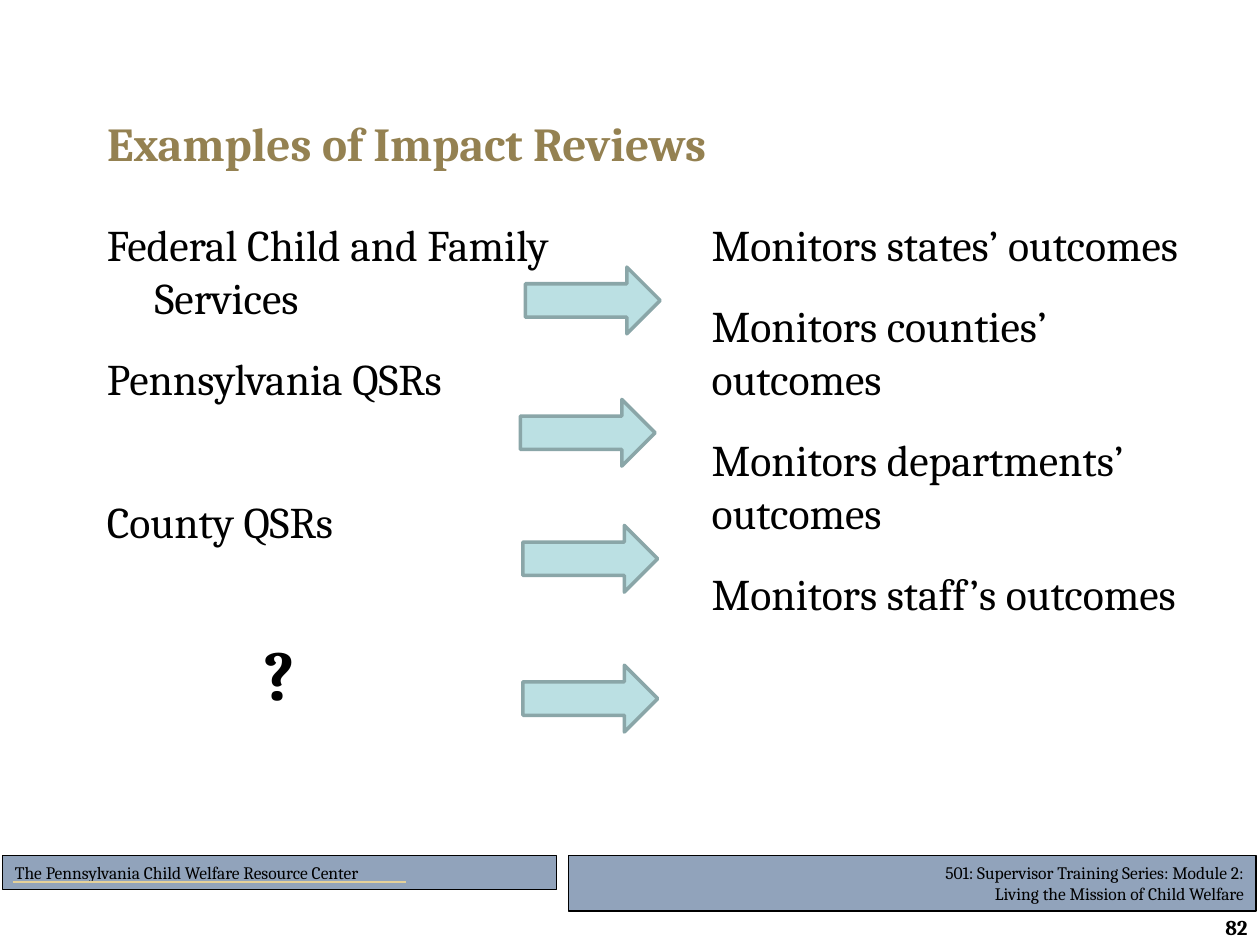
from dataclasses import dataclass

from lxml import etree
from pptx import Presentation
from pptx.dml.color import RGBColor
from pptx.enum.shapes import MSO_CONNECTOR, MSO_SHAPE
from pptx.enum.text import MSO_ANCHOR, PP_ALIGN
from pptx.oxml.ns import qn
from pptx.util import Inches, Pt

RECTANGLE, RIGHT_ARROW = MSO_SHAPE.RECTANGLE, MSO_SHAPE.RIGHT_ARROW
STRAIGHT = MSO_CONNECTOR.STRAIGHT
TOP, MIDDLE = MSO_ANCHOR.TOP, MSO_ANCHOR.MIDDLE
LEFT, RIGHT = PP_ALIGN.LEFT, PP_ALIGN.RIGHT

FONT = "Cambria"
BLACK, GOLD, PALE_GOLD = "000000", "948151", "E5D199"
BAR_BLUE, ARROW_FILL, ARROW_EDGE = "91A3BB", "BBE0E3", "8AA6A8"


@dataclass
class Box:
    left: float
    top: float
    width: float
    height: float

    def lengths(self):
        return [Inches(n) for n in (self.left, self.top, self.width, self.height)]


@dataclass
class Entry:
    text: str
    space_before: float = 0
    margin: float = 0.38
    indent: float = 0
    size: float = 25
    bold: bool = False
    color: str = BLACK
    align: PP_ALIGN = LEFT


@dataclass
class FooterBar:
    box: Box
    lines: list[str]
    align: PP_ALIGN
    line_width: float


REVIEWS = [
    Entry("Federal Child and Family Services", indent=-0.38),
    Entry("Pennsylvania QSRs", 16.5, indent=-0.38),
    Entry("County QSRs", 51.5, indent=-0.38),
    Entry("?", 48, margin=1.24, size=40, bold=True),
]
OUTCOMES = [
    Entry("Monitors states’ outcomes"),
    Entry("Monitors counties’ outcomes", 16.5),
    Entry("Monitors departments’ outcomes", 16.5),
    Entry("Monitors staff’s outcomes", 16.5),
]
FOOTER_BARS = [
    FooterBar(Box(4.51, 6.79, 5.46, 0.44),
              ["501: Supervisor Training Series: Module 2:",
               "Living the Mission of Child Welfare"], RIGHT, 0.75),
    FooterBar(Box(0.02, 6.79, 4.4, 0.27),
              ["The Pennsylvania Child Welfare Resource Center"], LEFT, 0.5),
]
ARROW_CORNERS = [(4.17, 2.12), (4.13, 3.17), (4.15, 4.17), (4.15, 5.28)]


def rgb(color: str) -> RGBColor:
    return RGBColor.from_string(color)


def write(shape, entries: list[Entry], anchor=TOP) -> None:
    frame = shape.text_frame
    frame.word_wrap = True
    frame.vertical_anchor = anchor
    frame.text = "\n".join(entry.text for entry in entries)
    for paragraph, entry in zip(frame.paragraphs, entries):
        paragraph.alignment = entry.align
        paragraph.space_before = Pt(entry.space_before)
        properties = paragraph._p.get_or_add_pPr()
        properties.set("marL", str(Inches(entry.margin)))
        properties.set("indent", str(Inches(entry.indent)))
        font = paragraph.runs[0].font
        font.name, font.size, font.bold = FONT, Pt(entry.size), entry.bold
        font.color.rgb = rgb(entry.color)


def add_text(slide, box: Box, entries: list[Entry], anchor=TOP) -> None:
    write(slide.shapes.add_textbox(*box.lengths()), entries, anchor)


def add_outlined(slide, kind, box: Box, fill: str, edge: str, width: float):
    shape = slide.shapes.add_shape(kind, *box.lengths())
    shape.shadow.inherit = False
    shape.fill.solid()
    shape.fill.fore_color.rgb = rgb(fill)
    shape.line.color.rgb = rgb(edge)
    shape.line.width = Pt(width)
    return shape


def add_footer_bar(slide, bar: FooterBar) -> None:
    shape = add_outlined(slide, RECTANGLE, bar.box, BAR_BLUE, BLACK, bar.line_width)
    write(shape, [Entry(line, margin=0, size=10, align=bar.align) for line in bar.lines])


def add_rule(slide, left: float, right: float, top: float) -> None:
    rule = slide.shapes.add_connector(
        STRAIGHT, Inches(left), Inches(top), Inches(right), Inches(top))
    rule.line.color.rgb = rgb(PALE_GOLD)
    rule.line.width = Pt(0.75)
    etree.SubElement(rule._element.spPr, qn("a:effectLst"))


def main() -> None:
    deck = Presentation()
    deck.slide_width, deck.slide_height = Inches(10), Inches(7.5)
    slide = deck.slides.add_slide(deck.slide_layouts[5])

    for bar in FOOTER_BARS:
        add_footer_bar(slide, bar)
    add_rule(slide, 0.1, 3.22, 7)

    title = slide.shapes.title
    title.left, title.top, title.width, title.height = Box(0.75, 0.85, 8.5, 0.57).lengths()
    write(title, [Entry("Examples of Impact Reviews", margin=0, size=27,
                        bold=True, color=GOLD)], MIDDLE)

    add_text(slide, Box(0.75, 1.68, 4.17, 5.1), REVIEWS)
    add_text(slide, Box(5.17, 1.68, 4.42, 4.89), OUTCOMES)
    for left, top in ARROW_CORNERS:
        add_outlined(slide, RIGHT_ARROW, Box(left, top, 1.07, 0.53),
                     ARROW_FILL, ARROW_EDGE, 2)

    add_text(slide, Box(8.89, 7.25, 1.11, 0.21),
             [Entry("82", margin=0, size=12, bold=True, align=RIGHT)], MIDDLE)
    deck.save("out.pptx")


if __name__ == "__main__":
    main()
